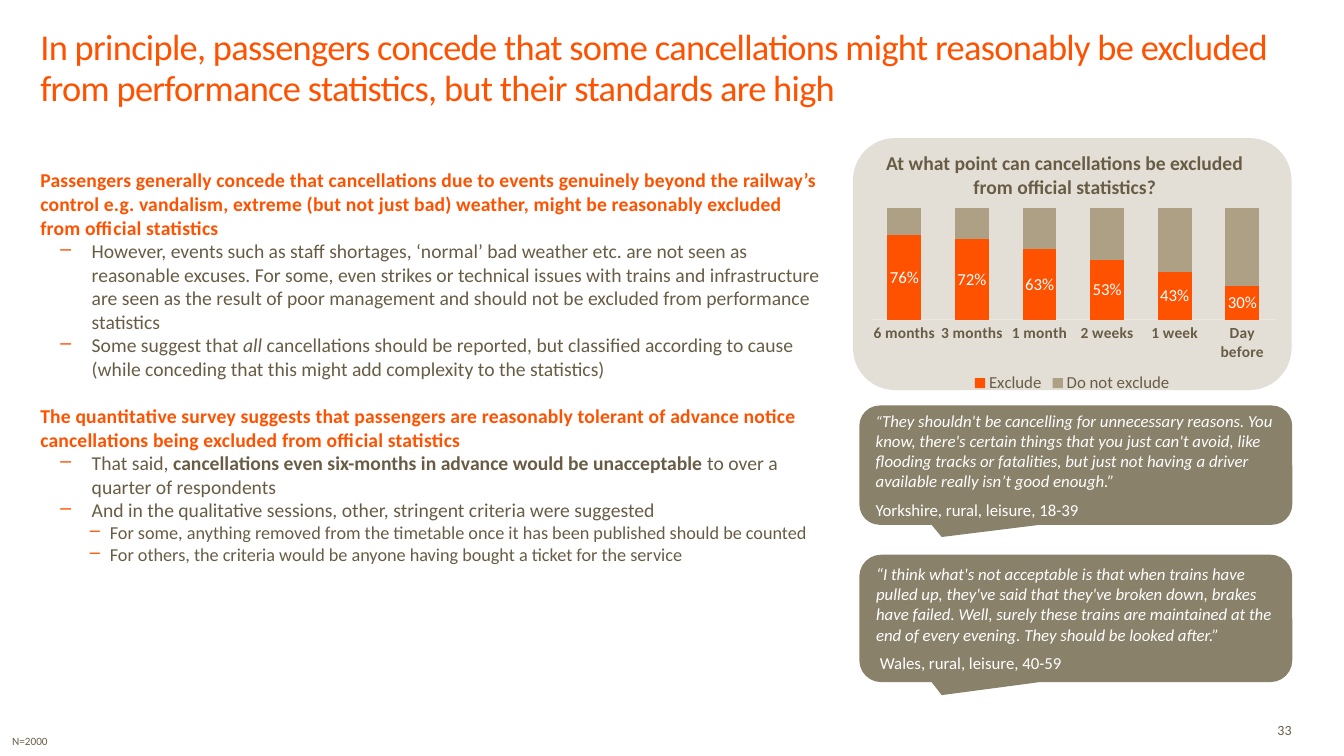
from lxml import etree
from pptx import Presentation
from pptx.chart.data import CategoryChartData
from pptx.dml.color import RGBColor
from pptx.enum.chart import XL_CHART_TYPE, XL_LABEL_POSITION, XL_LEGEND_POSITION, XL_TICK_MARK
from pptx.enum.shapes import MSO_SHAPE
from pptx.enum.text import MSO_ANCHOR, PP_ALIGN
from pptx.oxml import parse_xml
from pptx.oxml.ns import nsdecls, qn
from pptx.util import Inches, Pt

STACKED = XL_CHART_TYPE.COLUMN_STACKED_100
LABEL_CENTER = XL_LABEL_POSITION.CENTER
LEGEND_BOTTOM = XL_LEGEND_POSITION.BOTTOM
NO_TICK = XL_TICK_MARK.NONE
ROUNDED, CALLOUT = MSO_SHAPE.ROUNDED_RECTANGLE, MSO_SHAPE.ROUNDED_RECTANGULAR_CALLOUT
TOP, MIDDLE, BOTTOM = MSO_ANCHOR.TOP, MSO_ANCHOR.MIDDLE, MSO_ANCHOR.BOTTOM
LEFT, CENTER, RIGHT = PP_ALIGN.LEFT, PP_ALIGN.CENTER, PP_ALIGN.RIGHT

ORANGE, BROWN, WHITE = "FF5200", "685C45", "FFFFFF"
PANEL, TAUPE, QUOTE, AXIS = "E4DFD6", "AEA085", "8A816B", "EBE7E1"


def color(value):
    return RGBColor.from_string(value)


class SlideBuilder:
    font_name = "Calibri"

    def __init__(self, slide):
        self.slide = slide

    def style(self, font, size, ink, bold=None, italic=None):
        font.name, font.size = self.font_name, Pt(size)
        font.bold, font.italic = bold, italic
        font.color.rgb = color(ink)

    def frame(self, left, top, width, height, anchor=TOP):
        box = self.slide.shapes.add_textbox(
            Inches(left), Inches(top), Inches(width), Inches(height))
        frame = box.text_frame
        frame.word_wrap = True
        frame.vertical_anchor = anchor
        frame.margin_left = frame.margin_right = 0
        frame.margin_top = frame.margin_bottom = 0
        return frame

    def paragraph(self, frame, text, size, ink=BROWN, bold=None, italic=None,
                  align=LEFT, spacing=0, indent=None):
        """Text is a string, or a list of (text, run font settings)."""
        first = frame.paragraphs[0]
        paragraph = frame.add_paragraph() if first.runs else first
        paragraph.alignment = align
        if indent:
            self.bullet(paragraph, *indent)
        self.style(paragraph.font, size, ink, bold, italic)
        parts = [(text, {})] if isinstance(text, str) else text
        for words, settings in parts:
            run = paragraph.add_run()
            run.text = words
            for name, value in settings.items():
                setattr(run.font, name, value)
            if spacing:
                run._r.get_or_add_rPr().set("spc", str(spacing))
        return paragraph

    def bullet(self, paragraph, margin, hanging):
        properties = paragraph._p.get_or_add_pPr()
        properties.set("marL", str(Inches(margin)))
        properties.set("indent", str(-Inches(hanging)))
        bullet_color = etree.SubElement(properties, qn("a:buClr"))
        etree.SubElement(bullet_color, qn("a:srgbClr")).set("val", ORANGE)
        etree.SubElement(properties, qn("a:buChar")).set("char", "–")

    def shape(self, kind, left, top, width, height, fill, outlined=False):
        shape = self.slide.shapes.add_shape(
            kind, Inches(left), Inches(top), Inches(width), Inches(height))
        shape.shadow.inherit = False
        shape.fill.solid()
        shape.fill.fore_color.rgb = color(fill)
        if outlined:
            shape.line.color.rgb = color(fill)
            shape.line.width = Pt(1)
        else:
            shape.line.fill.background()
        return shape

    def quote(self, top, height, words, speaker):
        callout = self.shape(CALLOUT, 8.53, top, 4.28, height, QUOTE, outlined=True)
        for index, value in enumerate((-0.31, 0.603, 0.167)):
            callout.adjustments[index] = value
        frame = callout.text_frame
        frame.word_wrap = True
        frame.vertical_anchor = MIDDLE
        quotation = self.paragraph(frame, words, 12, WHITE, italic=True)
        quotation.space_after = Pt(6)
        self.paragraph(frame, speaker, 12, WHITE)

    def stacked_chart(self, left, top, width, height, categories, series, plot_area):
        data = CategoryChartData(number_format="0%")
        data.categories = categories
        for name, values, _ in series:
            data.add_series(name, values)
        chart = self.slide.shapes.add_chart(
            STACKED, Inches(left), Inches(top), Inches(width), Inches(height), data).chart
        self.style(chart.font, 10, BROWN)
        chart.has_title = False
        chart.has_legend = True
        chart.legend.position = LEGEND_BOTTOM
        chart.legend.include_in_layout = False
        self.style(chart.legend.font, 12, BROWN)

        # Axes
        chart.value_axis.visible = False
        chart.value_axis.has_major_gridlines = False
        chart.value_axis.maximum_scale = 1
        axis = chart.category_axis
        axis.major_tick_mark = NO_TICK
        axis.format.line.color.rgb = color(AXIS)
        axis.format.line.width = Pt(0.75)
        self.style(axis.tick_labels.font, 11, BROWN, bold=True)

        # Columns
        plot = chart.plots[0]
        plot.gap_width, plot.overlap = 100, 100
        plot.vary_by_categories = False
        for column, (_, _, fill) in zip(plot.series, series):
            column.format.fill.solid()
            column.format.fill.fore_color.rgb = color(fill)
        labels = plot.series[0].data_labels
        labels.show_value = True
        labels.position = LABEL_CENTER
        labels.number_format, labels.number_format_is_linked = "0%", False
        self.style(labels.font, 12, WHITE)

        # Fixed plot area
        fields = "".join(f'<c:{name}Mode val="edge"/>' for name in "xy")
        fields += "".join(f'<c:{name} val="{value}"/>'
                          for name, value in zip("xywh", plot_area))
        area = chart._chartSpace.chart.plotArea
        for layout in area.findall(qn("c:layout")):
            area.remove(layout)
        area.insert(0, parse_xml(
            f'<c:layout {nsdecls("c")}><c:manualLayout><c:layoutTarget val="inner"/>'
            f'{fields}</c:manualLayout></c:layout>'))


def main():
    presentation = Presentation()
    presentation.slide_width, presentation.slide_height = Inches(13.33), Inches(7.5)
    builder = SlideBuilder(presentation.slides.add_slide(presentation.slide_layouts[6]))

    # Title
    title = builder.paragraph(
        builder.frame(0.4, 0.32, 12.28, 0.76, BOTTOM),
        "In principle, passengers concede that some cancellations might reasonably be "
        "excluded from performance statistics, but their standards are high",
        26, ORANGE, spacing=-50)
    title.line_spacing = Pt(29)

    # Findings
    findings = [
        (0, "Passengers generally concede that cancellations due to events genuinely beyond "
            "the railway’s control e.g. vandalism, extreme (but not just bad) weather, might "
            "be reasonably excluded from official statistics"),
        (1, "However, events such as staff shortages, ‘normal’ bad weather etc. are not seen "
            "as reasonable excuses. For some, even strikes or technical issues with trains "
            "and infrastructure are seen as the result of poor management and should not be "
            "excluded from performance statistics"),
        (1, [("Some suggest that ", {}), ("all", {"italic": True}),
             (" cancellations should be reported, but classified according to cause (while "
              "conceding that this might add complexity to the statistics)", {})]),
        (0, "The quantitative survey suggests that passengers are reasonably tolerant of "
            "advance notice cancellations being excluded from official statistics"),
        (1, [("That said, ", {}),
             ("cancellations even six-months in advance would be unacceptable ",
              {"bold": True}), ("to over a quarter of respondents", {})]),
        (1, "And in the qualitative sessions, other, stringent criteria were suggested"),
        (2, "For some, anything removed from the timetable once it has been published "
            "should be counted"),
        (2, "For others, the criteria would be anyone having bought a ticket for the service"),
    ]
    levels = [
        dict(size=14, ink=ORANGE, bold=True, spacing=10),
        dict(size=14, indent=(0.51, 0.31)),
        dict(size=13, indent=(0.69, 0.2)),
    ]
    body = builder.frame(0.4, 1.67, 7.75, 4.15)
    for position, (level, text) in enumerate(findings):
        paragraph = builder.paragraph(body, text, **levels[level])
        if level == 0 and position:
            paragraph.space_before = Pt(17)

    # Chart panel
    panel = builder.shape(ROUNDED, 8.46, 1.37, 4.35, 2.5, PANEL)
    panel.adjustments[0] = 0.167
    heading = builder.frame(8.45, 1.5, 4.22, 0.38)
    for line in ("At what point can cancellations be excluded", "from official statistics?"):
        builder.paragraph(heading, line, 14, bold=True, align=CENTER)
    excluded = [0.76, 0.72, 0.63, 0.53, 0.43, 0.3]
    builder.stacked_chart(
        8.47, 1.94, 4.33, 2,
        ["6 months", "3 months", "1 month", "2 weeks", "1 week", "Day before"],
        [("Exclude", excluded, ORANGE),
         ("Do not exclude", [round(1 - share, 2) for share in excluded], TAUPE)],
        (0.038, 0.062, 0.929, 0.554))

    # Passenger quotes
    builder.quote(4.03, 1.17, [
        ("“", {"size": Pt(11)}),
        ("They shouldn't be cancelling for unnecessary reasons. You know, there's certain "
         "things that you just can't avoid, like flooding tracks or fatalities, but just not "
         "having a driver available really isn’t good enough.”", {})],
        "Yorkshire, rural, leisure, 18-39")
    builder.quote(
        5.51, 1.25,
        "“I think what's not acceptable is that when trains have pulled up, they've said that "
        "they've broken down, brakes have failed. Well, surely these trains are maintained at "
        "the end of every evening. They should be looked after.”",
        " Wales, rural, leisure, 40-59")

    # Footer
    builder.paragraph(builder.frame(12.57, 7.13, 0.24, 0.22, MIDDLE), "33", 10, align=RIGHT)
    builder.paragraph(builder.frame(0.12, 7.28, 6.1, 0.22), "N=2000", 8)

    presentation.save("out.pptx")


if __name__ == "__main__":
    main()
